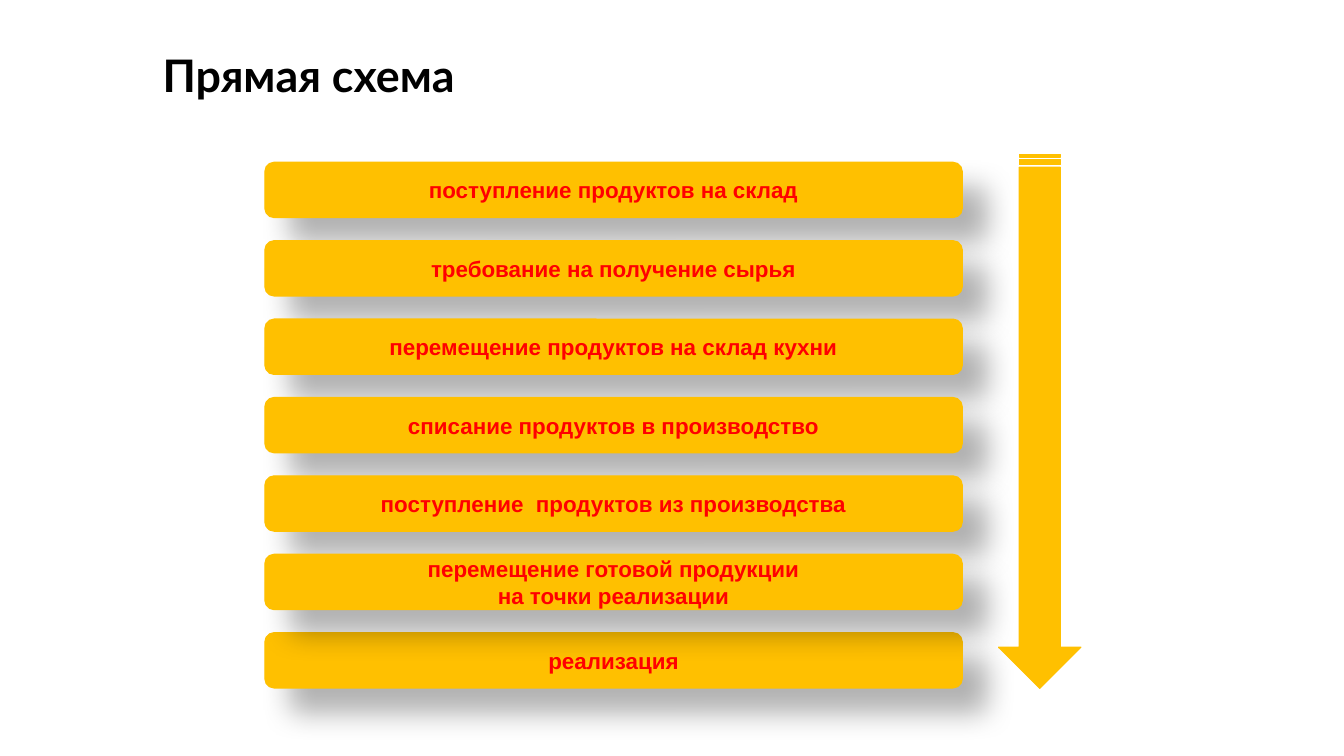
from lxml.etree import SubElement
from pptx import Presentation
from pptx.dml.color import RGBColor
from pptx.enum.shapes import MSO_SHAPE
from pptx.enum.text import MSO_ANCHOR, PP_ALIGN
from pptx.oxml.ns import qn
from pptx.util import Pt

AMBER = "FFC000"
RED = "FF0000"
BLACK = "000000"

STEPS = [
    ["поступление продуктов на склад"],
    ["требование на получение сырья"],
    ["перемещение продуктов на склад кухни"],
    ["списание продуктов в производство"],
    ["поступление  продуктов из производства"],
    ["перемещение готовой продукции", "на точки реализации"],
    ["реализация"],
]
# The last step lies beneath the two before it, so their shadows fall on it.
STACKING = [0, 1, 2, 3, 6, 4, 5]

STEP_LEFT, STEP_TOP = 142, 87
STEP_WIDTH, STEP_HEIGHT = 373.5, 29.5
STEP_PITCH = 42


def color(value):
    return RGBColor.from_string(value)


def add_span(para, text, font, size, value):
    span = para.add_run()
    span.text = text
    span.font.name = font
    span.font.size = Pt(size)
    span.font.bold = True
    span.font.color.rgb = color(value)


def add_amber_shape(page, kind, left, top, width, height):
    shape = page.shapes.add_shape(kind, Pt(left), Pt(top), Pt(width), Pt(height))
    shape.shadow.inherit = False
    shape.fill.solid()
    shape.fill.fore_color.rgb = color(AMBER)
    shape.line.color.rgb = color(AMBER)
    shape.line.width = Pt(0.75)
    return shape


def cast_shadow(shape):
    """Give the shape a soft shadow down and to the right."""
    effects = shape._element.spPr.find(qn("a:effectLst"))
    shadow = SubElement(effects, qn("a:outerShdw"), blurRad=str(Pt(15)),
                        dist=str(Pt(18)), dir=str(45 * 60000),
                        algn="ctr", rotWithShape="0")
    tint = SubElement(shadow, qn("a:srgbClr"), val=BLACK)
    SubElement(tint, qn("a:alpha"), val="30000")


def add_title(page, text):
    box = page.shapes.add_textbox(Pt(80), Pt(25), Pt(580), Pt(34))
    frame = box.text_frame
    frame.word_wrap = True
    frame.vertical_anchor = MSO_ANCHOR.MIDDLE
    para = frame.paragraphs[0]
    para.line_spacing = 0.9
    add_span(para, text, "Lato", 24, BLACK)


def add_step(page, index):
    bar = add_amber_shape(page, MSO_SHAPE.ROUNDED_RECTANGLE, STEP_LEFT,
                          STEP_TOP + index * STEP_PITCH, STEP_WIDTH, STEP_HEIGHT)
    cast_shadow(bar)
    frame = bar.text_frame
    frame.word_wrap = False
    frame.vertical_anchor = MSO_ANCHOR.MIDDLE
    for number, text in enumerate(STEPS[index]):
        para = frame.add_paragraph() if number else frame.paragraphs[0]
        para.alignment = PP_ALIGN.CENTER
        add_span(para, text, "Arial", 12, RED)


def add_down_arrow(page):
    arrow = add_amber_shape(page, MSO_SHAPE.STRIPED_RIGHT_ARROW, 414, 203.75, 286, 44)
    arrow.rotation = 90


def main():
    deck = Presentation()
    deck.slide_width, deck.slide_height = Pt(720), Pt(405)
    page = deck.slides.add_slide(deck.slide_layouts[6])
    add_title(page, "Прямая схема")
    for index in STACKING:
        add_step(page, index)
    add_down_arrow(page)
    deck.save("out.pptx")


if __name__ == "__main__":
    main()
